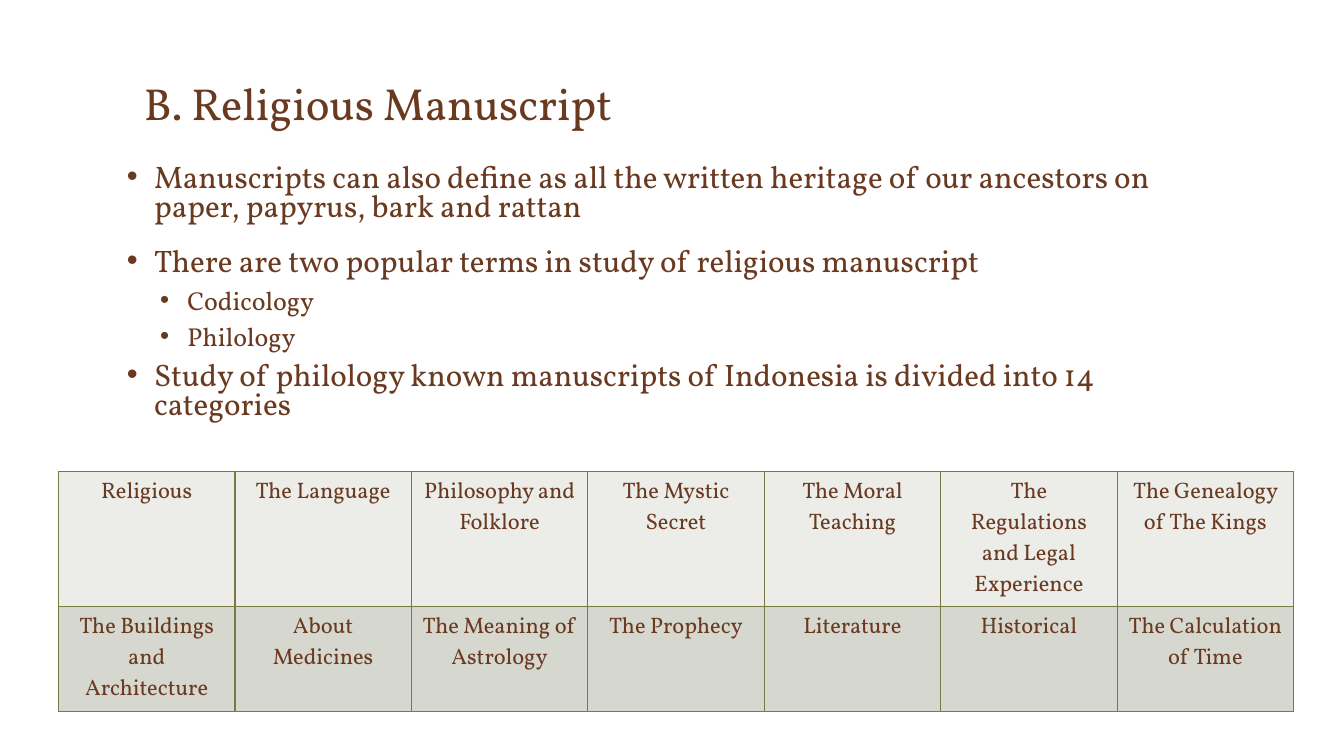
from dataclasses import dataclass

from lxml import etree
from pptx import Presentation
from pptx.dml.color import RGBColor
from pptx.enum.text import MSO_ANCHOR, PP_ALIGN
from pptx.oxml.ns import qn
from pptx.util import Inches, Pt

CENTER = PP_ALIGN.CENTER
TOP = MSO_ANCHOR.TOP


@dataclass(frozen=True)
class Theme:
    font: str = "Vollkorn"
    ink: str = "6A3A20"
    border: str = "787A41"
    row_fills: tuple = ("ECECE9", "D6D7CF")
    title_size: float = 32
    point_size: float = 22.2
    subpoint_size: float = 18.5
    cell_size: float = 16


theme = Theme()


def style(paragraph, size):
    paragraph.font.name = theme.font
    paragraph.font.size = Pt(size)
    paragraph.font.color.rgb = RGBColor.from_string(theme.ink)


def add_text_frame(left, top, width, height, inset_top):
    box = page.shapes.add_textbox(Inches(left), Inches(top), Inches(width), Inches(height))
    frame = box.text_frame
    frame.word_wrap = True
    frame.vertical_anchor = TOP
    frame.margin_top = Inches(inset_top)
    frame.margin_bottom = 0
    return frame


deck = Presentation()
deck.slide_width = Inches(13.33)
deck.slide_height = Inches(7.5)
page = deck.slides.add_slide(deck.slide_layouts[6])

# Title
title = add_text_frame(1.33, 0.5, 10.66, 0.83, 0.25).paragraphs[0]
title.text = "B. Religious Manuscript"
style(title, theme.title_size)

# Bulleted points: text, level, space before
points = [
    ("Manuscripts can also define as all the written heritage of our ancestors on "
     "paper, papyrus, bark and rattan", 0, 0),
    ("There are two popular terms in study of religious manuscript", 0, 18),
    ("Codicology", 1, 8),
    ("Philology", 1, 8),
    ("Study of philology known manuscripts of Indonesia is divided into 14 categories", 0, 8),
]
body = add_text_frame(1.16, 1.58, 10.66, 2.83, 0.05)
for index, (text, level, space_before) in enumerate(points):
    para = body.add_paragraph() if index else body.paragraphs[0]
    para.text = text
    para.level = level
    para.line_spacing = 0.8
    para.space_before = Pt(space_before)
    properties = para._p.get_or_add_pPr()
    properties.set("marL", str(Inches(0.27 + 0.33 * level)))
    properties.set("indent", str(Inches(-0.27)))
    etree.SubElement(properties, qn("a:buFont"), typeface="Arial")
    etree.SubElement(properties, qn("a:buChar"), char="•")
    style(para, theme.subpoint_size if level else theme.point_size)

# Table of the 14 categories
categories = [
    ["Religious", "The Language", "Philosophy and Folklore", "The Mystic Secret",
     "The Moral Teaching", "The Regulations and Legal Experience",
     "The Genealogy of The Kings"],
    ["The Buildings and Architecture", "About Medicines", "The Meaning of Astrology",
     "The Prophecy", "Literature", "Historical", "The Calculation of Time"],
]
row_heights = [1.34, 1.04]
table = page.shapes.add_table(
    len(categories), len(categories[0]),
    Inches(0.58), Inches(4.68), Inches(12.25), Inches(sum(row_heights)),
).table
table.first_row = False
table.horz_banding = False

for row_index, names in enumerate(categories):
    table.rows[row_index].height = Inches(row_heights[row_index])
    for column_index, name in enumerate(names):
        cell = table.cell(row_index, column_index)
        cell.text = name
        para = cell.text_frame.paragraphs[0]
        para.alignment = CENTER
        style(para, theme.cell_size)

        # Borders come before the fill in the cell properties
        cell_properties = cell._tc.get_or_add_tcPr()
        for side in ("lnL", "lnR", "lnT", "lnB"):
            line = etree.SubElement(cell_properties, qn(f"a:{side}"), w=str(Pt(1)))
            line_fill = etree.SubElement(line, qn("a:solidFill"))
            etree.SubElement(line_fill, qn("a:srgbClr"), val=theme.border)
        cell.fill.solid()
        cell.fill.fore_color.rgb = RGBColor.from_string(theme.row_fills[row_index])

deck.save("out.pptx")
